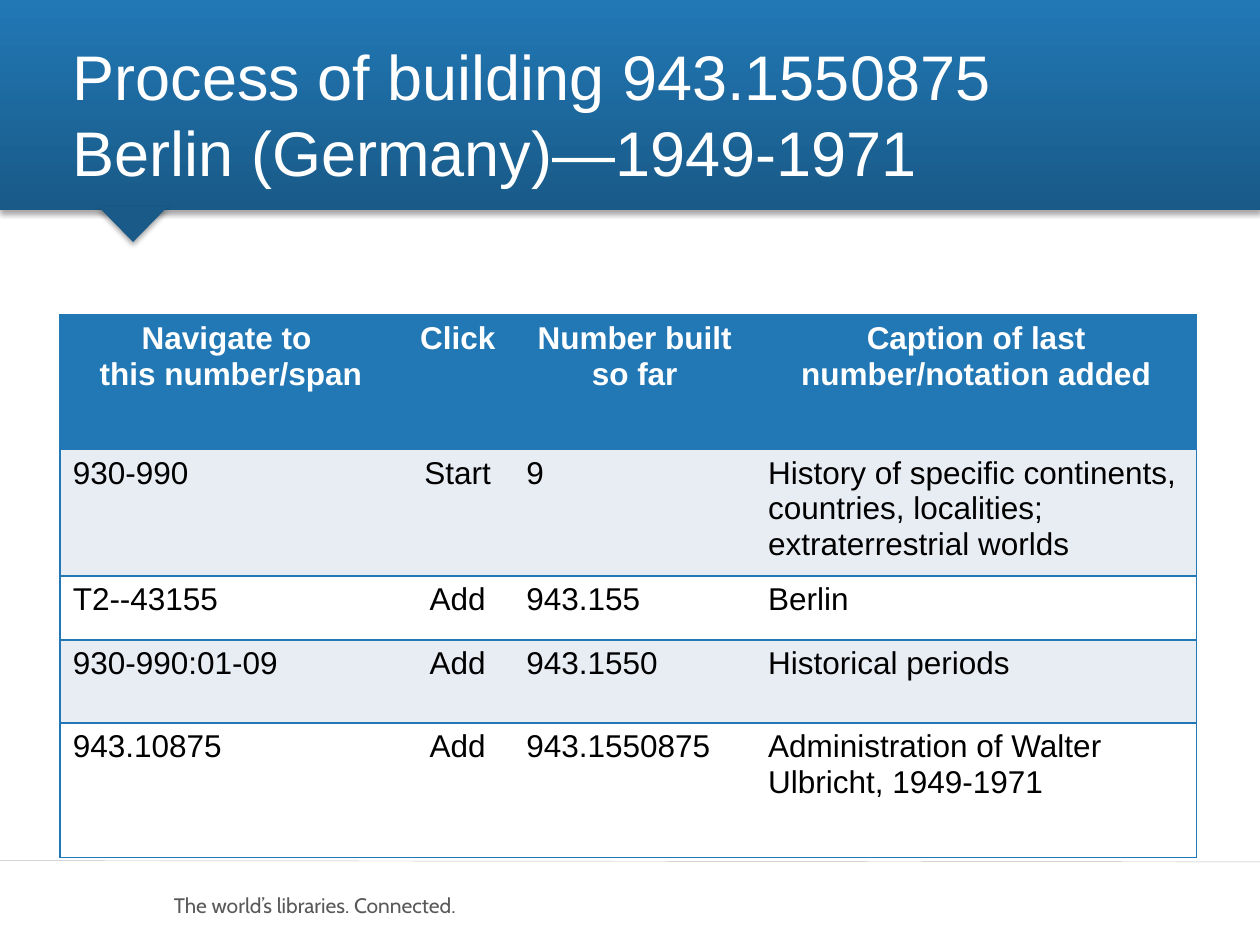
from typing import NamedTuple

from lxml import etree
from pptx import Presentation
from pptx.dml.color import RGBColor
from pptx.enum.shapes import MSO_CONNECTOR, MSO_SHAPE
from pptx.enum.text import MSO_ANCHOR, PP_ALIGN
from pptx.oxml.ns import qn
from pptx.util import Pt

LEFT, CENTER = PP_ALIGN.LEFT, PP_ALIGN.CENTER
MIDDLE = MSO_ANCHOR.MIDDLE
ROUND_RECT, TRIANGLE = MSO_SHAPE.ROUNDED_RECTANGLE, MSO_SHAPE.ISOSCELES_TRIANGLE
STRAIGHT = MSO_CONNECTOR.STRAIGHT

COLORS = {
    "blue": "2178B5",
    "dark_blue": "195A88",
    "band": "E8ECF3",
    "white": "FFFFFF",
    "black": "000000",
    "footer": "595959",
    "rule": "BFBFBF",
}


class Box(NamedTuple):
    left: float
    top: float
    width: float
    height: float

    def lengths(self) -> tuple:
        return tuple(Pt(value) for value in self)


class TextStyle(NamedTuple):
    size: float
    color: str
    font: str = "Arial"
    bold: bool = False
    align: PP_ALIGN = LEFT


class Column(NamedTuple):
    heading: str
    width: float
    align: PP_ALIGN = LEFT


class Step(NamedTuple):
    navigate_to: str
    click: str
    number_so_far: str
    caption: str
    height: float


HEADER_HEIGHT = 77
COLUMNS = [
    Column("Navigate to \nthis number/span", 195.1),
    Column("Click", 64.1, CENTER),
    Column("Number built so far", 138.2),
    Column("Caption of last number/notation added", 252),
]
STEPS = [
    Step("930-990", "Start", "9",
         "History of specific continents, countries, localities; extraterrestrial worlds", 67.8),
    Step("T2--43155", "Add", "943.155", "Berlin", 36.7),
    Step("930-990:01-09", "Add", "943.1550", "Historical periods", 47.4),
    Step("943.10875", "Add", "943.1550875",
         "Administration of Walter Ulbricht, 1949-1971", 77),
]


def rgb(name: str) -> RGBColor:
    return RGBColor.from_string(COLORS[name])


def write(frame, text: str, style: TextStyle) -> None:
    frame.text = text
    for paragraph in frame.paragraphs:
        paragraph.alignment = style.align
        paragraph.font.size = Pt(style.size)
        paragraph.font.name = style.font
        paragraph.font.bold = style.bold
        paragraph.font.color.rgb = rgb(style.color)


def add_label(slide, box: Box, text: str, style: TextStyle, wrap: bool) -> None:
    frame = slide.shapes.add_textbox(*box.lengths()).text_frame
    frame.word_wrap = wrap
    frame.vertical_anchor = MIDDLE
    write(frame, text, style)


def add_soft_shadow(shape) -> None:
    effects = etree.SubElement(shape._element.spPr, qn("a:effectLst"))
    shadow = etree.SubElement(effects, qn("a:outerShdw"), blurRad=str(Pt(3.1)),
                              dist=str(Pt(1.8)), dir="5400000", rotWithShape="0")
    color = etree.SubElement(shadow, qn("a:srgbClr"), val=COLORS["black"])
    etree.SubElement(color, qn("a:alpha"), val="35000")


def add_banner(slide) -> None:
    """Draw the title band and the pointer hanging below it."""
    band = slide.shapes.add_shape(ROUND_RECT, *Box(0, 0, 720, 120).lengths())
    band.adjustments[0] = 0
    band.fill.gradient()
    band.fill.gradient_angle = 90
    for stop, name, position in zip(band.fill.gradient_stops, ("dark_blue", "blue"), (0, 1)):
        stop.color.rgb = rgb(name)
        stop.position = position

    pointer = slide.shapes.add_shape(TRIANGLE, *Box(56.2, 118.1, 39.6, 20.2).lengths())
    pointer.rotation = 180
    pointer.fill.solid()
    pointer.fill.fore_color.rgb = rgb("dark_blue")

    for shape in (band, pointer):
        shape.line.fill.background()
        add_soft_shadow(shape)


def add_footer_rule(slide) -> None:
    rule = slide.shapes.add_connector(STRAIGHT, Pt(0), Pt(491.8), Pt(720), Pt(492.5))
    rule.line.color.rgb = rgb("rule")
    rule.line.width = Pt(0.25)
    etree.SubElement(rule._element.spPr, qn("a:effectLst"))


def set_borders(cell, visible: str) -> None:
    """Draw the sides named by letter in visible; clear the others."""
    properties = cell._tc.get_or_add_tcPr()
    for side in "LRTB":
        line = etree.SubElement(properties, qn(f"a:ln{side}"), w=str(Pt(1)))
        if side in visible:
            fill = etree.SubElement(line, qn("a:solidFill"))
            etree.SubElement(fill, qn("a:srgbClr"), val=COLORS["blue"])
        else:
            etree.SubElement(line, qn("a:noFill"))


def fill_cell(cell, text: str, style: TextStyle, background: str, borders: str) -> None:
    set_borders(cell, borders)
    cell.fill.solid()
    cell.fill.fore_color.rgb = rgb(background)
    write(cell.text_frame, text, style)


def add_steps_table(slide) -> None:
    heights = [HEADER_HEIGHT] + [step.height for step in STEPS]
    box = Box(34.4, 180, sum(column.width for column in COLUMNS), sum(heights))
    table = slide.shapes.add_table(len(heights), len(COLUMNS), *box.lengths()).table
    for row, height in zip(table.rows, heights):
        row.height = Pt(height)

    last = len(COLUMNS) - 1
    heading_style = TextStyle(18, "white", bold=True, align=CENTER)
    for c, column in enumerate(COLUMNS):
        table.columns[c].width = Pt(column.width)
        borders = "TB" + ("L" if c == 0 else "") + ("R" if c == last else "")
        fill_cell(table.cell(0, c), column.heading, heading_style, "blue", borders)
        body_style = TextStyle(18, "black", align=column.align)
        for r, step in enumerate(STEPS, start=1):
            background = "band" if r % 2 else "white"
            fill_cell(table.cell(r, c), step[c], body_style, background, borders)


def main() -> None:
    deck = Presentation()
    deck.slide_width, deck.slide_height = Pt(720), Pt(540)
    slide = deck.slides.add_slide(deck.slide_layouts[6])

    add_label(slide, Box(92.2, 506.2, 202.3, 21.6), "The world’s libraries. Connected.",
              TextStyle(12, "footer", font="Cabin"), wrap=True)
    add_footer_rule(slide)
    add_banner(slide)
    add_label(slide, Box(34.6, 14.5, 550, 100.8),
              "Process of building 943.1550875\nBerlin (Germany)—1949-1971",
              TextStyle(36, "white"), wrap=True)
    add_steps_table(slide)
    deck.save("out.pptx")


if __name__ == "__main__":
    main()
